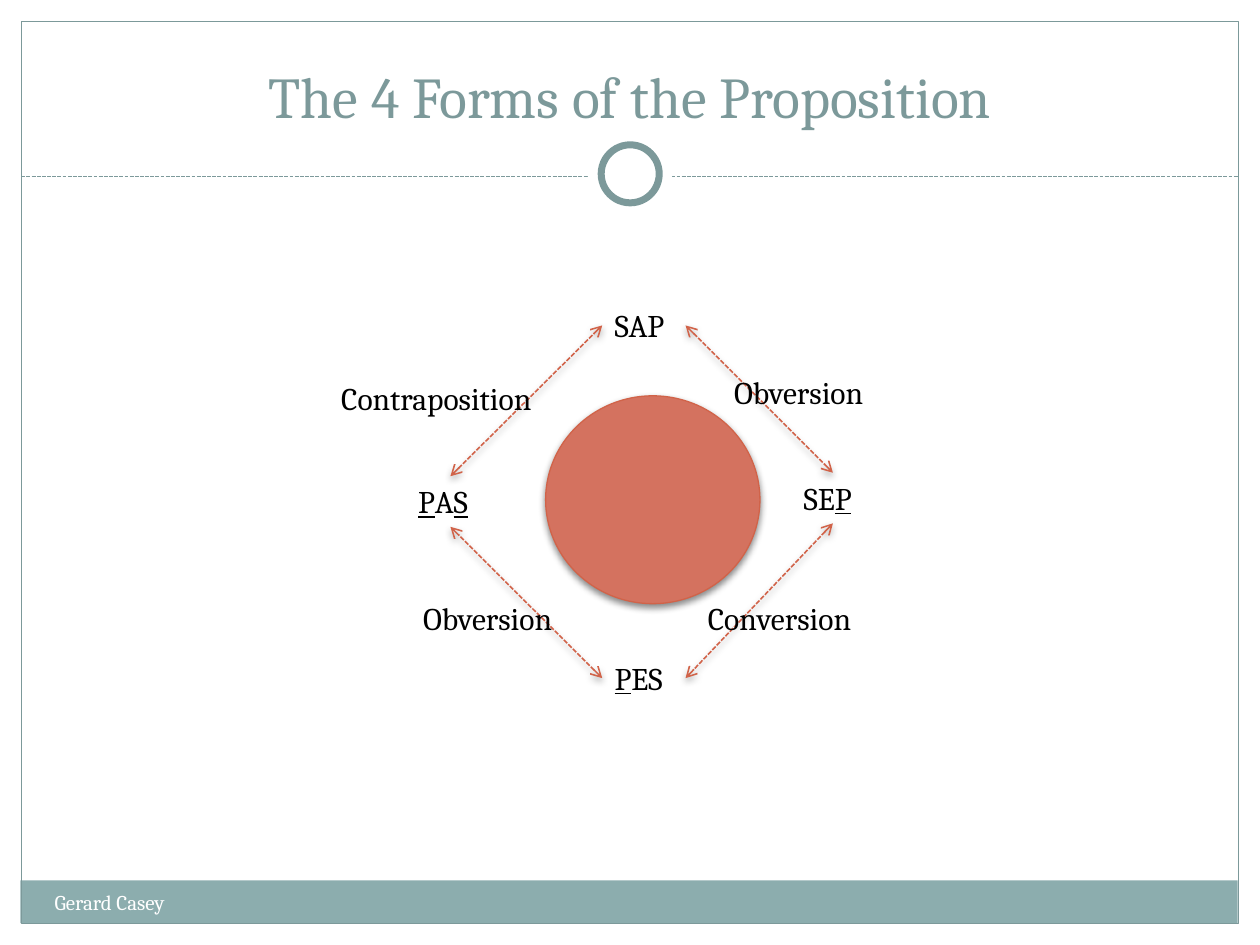
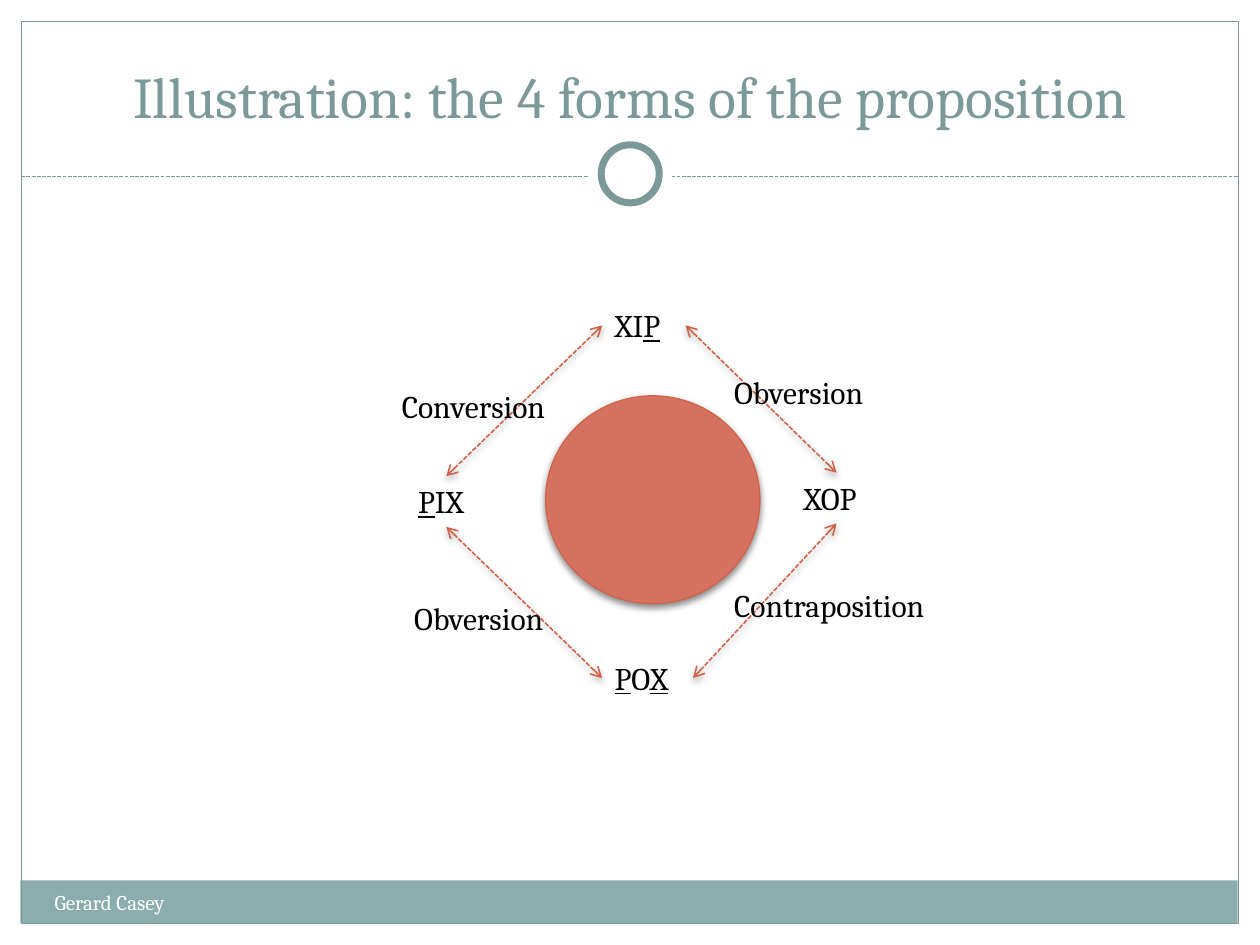
from lxml import etree
from pptx import Presentation
from pptx.dml.color import RGBColor
from pptx.enum.dml import MSO_LINE as Dash
from pptx.enum.shapes import MSO_CONNECTOR as Link, MSO_SHAPE as Form
from pptx.enum.text import MSO_ANCHOR as Anchor, MSO_AUTO_SIZE as Fit, PP_ALIGN as Align
from pptx.oxml.ns import qn
from pptx.util import Cm, Pt

TEAL = RGBColor(0x7C, 0x99, 0x9A)
BAND = RGBColor(0x8C, 0xAD, 0xAE)
RUST = RGBColor(0xD1, 0x63, 0x49)
CORAL = RGBColor(0xD4, 0x72, 0x5F)
WHITE = RGBColor(0xFF, 0xFF, 0xFF)
BLACK = RGBColor(0, 0, 0)

HEAD = {"name": "Cambria", "size": Pt(33)}
BODY = {"name": "Cambria", "size": Pt(18)}
FOOT = {"name": "Cambria", "size": Pt(12)}
RULE = {"width": Pt(0.75), "dash_style": Dash.SQUARE_DOT}
ARROW = {"width": Pt(0.9), "dash_style": Dash.SQUARE_DOT}

TOP, LEFT, BOTTOM, RIGHT = range(4)
SPOTS = [(12.14, 6.05), (15.95, 9.53), (12.14, 13.16), (8.18, 9.6)]
SIDES = [(RIGHT, TOP), (BOTTOM, RIGHT), (LEFT, BOTTOM), (TOP, LEFT)]
ROW = 1.02

SLIDES = [
    ("The 4 Forms of the Proposition",
     [("SAP", 1.68), ("SE_P_", 1.68), ("_P_ES", 1.68), ("_P_A_S_", 1.8)],
     [("Obversion", 14.55, 7.39, 3.56), ("Conversion", 14.02, 11.96, 3.84),
      ("Obversion", 8.28, 11.96, 3.4), ("Contraposition", 6.63, 7.52, 4.93)]),
    ("Illustration: the 4 forms of the proposition",
     [("XI_P_", 1.68), ("XOP", 1.83), ("_P_O_X_", 1.83), ("_P_IX", 1.63)],
     [("Obversion", 14.55, 7.39, 3.56), ("Contraposition", 14.55, 11.68, 4.93),
      ("Obversion", 8.1, 11.96, 3.4), ("Conversion", 7.85, 7.67, 3.84)]),
]


def style(item, form):
    """Set each format value on the item."""
    for key, value in form.items():
        setattr(item, key, value)


def shade(item, alpha=0):
    """Replace the theme shadow by a soft drop shadow, or by none."""
    effects = etree.SubElement(item._element.spPr, qn("a:effectLst"))
    if alpha:
        drop = etree.SubElement(effects, qn("a:outerShdw"), blurRad=str(Pt(4)),
                                dist=str(Pt(2)), dir="5400000", rotWithShape="0")
        tint = etree.SubElement(drop, qn("a:srgbClr"), val=str(BLACK))
        etree.SubElement(tint, qn("a:alpha"), val=str(alpha * 1000))


def add_form(slide, kind, place, fill=None, line=None, width=0.75, alpha=0):
    """Add a preset shape."""
    shape = slide.shapes.add_shape(kind, *map(Cm, place))
    if fill is None:
        shape.fill.background()
    else:
        shape.fill.solid()
        shape.fill.fore_color.rgb = fill
    if line is None:
        shape.line.fill.background()
    else:
        shape.line.color.rgb = line
        shape.line.width = Pt(width)
    shade(shape, alpha)


def add_line(slide, ends, form, color):
    """Add a dashed straight line."""
    line = slide.shapes.add_connector(Link.STRAIGHT, *map(Cm, ends))
    line.line.color.rgb = color
    style(line.line, form)
    return line


def add_text(slide, text, place, form=BODY, color=BLACK):
    """Add a text box, with parts between underscores underlined."""
    box = slide.shapes.add_textbox(*map(Cm, place))
    box.text_frame.word_wrap = True
    para = box.text_frame.paragraphs[0]
    for index, part in enumerate(text.split("_")):
        if part:
            run = para.add_run()
            run.text = part
            style(run.font, form)
            run.font.color.rgb = color
            if index % 2:
                run.font.underline = True
    return box


def add_arrow(slide, start, end, sides):
    """Join two terms by a two-headed arrow."""
    arrow = add_line(slide, (0, 0, 1, 1), ARROW, RUST)
    arrow.begin_connect(start, sides[0])
    arrow.end_connect(end, sides[1])
    for tag in ("a:headEnd", "a:tailEnd"):
        etree.SubElement(arrow.line._get_or_add_ln(), qn(tag), type="arrow")
    shade(arrow, 35)


def add_frame(slide):
    """Draw the border, footer band, rule and ring."""
    add_form(slide, Form.RECTANGLE, (0.41, 17.75, 24.54, 0.86), BAND)
    add_form(slide, Form.RECTANGLE, (0.43, 0.43, 24.54, 18.19), line=TEAL)
    shade(add_line(slide, (0.43, 3.56, 24.97, 3.56), RULE, TEAL))
    add_form(slide, Form.OVAL, (11.85, 2.67, 1.7, 1.7), WHITE)
    add_form(slide, Form.OVAL, (12.12, 2.92, 1.17, 1.17), WHITE, TEAL, 4)
    add_text(slide, "Gerard Casey", (0.85, 17.81, 9.95, ROW), FOOT, WHITE)


def set_title(slide, text):
    """Fill, place and format the title."""
    title = slide.shapes.title
    style(title, {"left": Cm(0.85), "top": Cm(0.64),
                  "width": Cm(23.7), "height": Cm(2.1)})
    frame = title.text_frame
    frame.text = text
    style(frame, {"vertical_anchor": Anchor.BOTTOM, "auto_size": Fit.NONE,
                  "word_wrap": True})
    para = frame.paragraphs[0]
    para.alignment = Align.CENTER
    font = para.runs[0].font
    style(font, HEAD)
    font.color.rgb = TEAL


def add_cycle(slide, terms, labels):
    """Draw the disc, the four terms, their arrows and labels."""
    add_form(slide, Form.OVAL, (11, 7.98, 4.32, 4.19), CORAL, RUST, alpha=45)
    boxes = [add_text(slide, term, (*spot, width, ROW))
             for (term, width), spot in zip(terms, SPOTS)]
    for start, end, sides in zip(boxes, boxes[1:] + boxes[:1], SIDES):
        add_arrow(slide, start, end, sides)
    for word, *place in labels:
        add_text(slide, word, (*place, ROW))


def main():
    """Build and save the slides."""
    deck = Presentation()
    style(deck, {"slide_width": Cm(25.4), "slide_height": Cm(19.05)})
    for title, terms, labels in SLIDES:
        slide = deck.slides.add_slide(deck.slide_layouts[5])
        add_frame(slide)
        set_title(slide, title)
        add_cycle(slide, terms, labels)
    deck.save("out.pptx")


if __name__ == "__main__":
    main()
